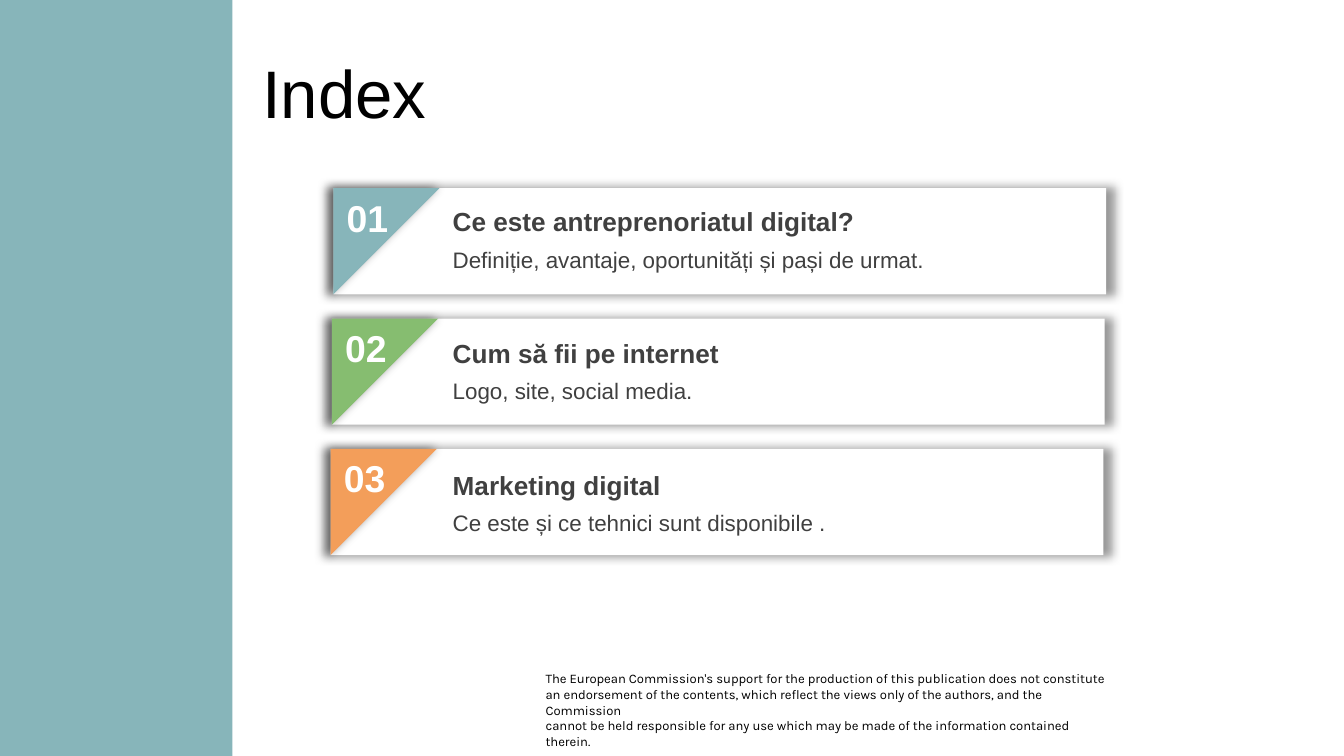
from lxml import etree
from pptx import Presentation
from pptx.dml.color import RGBColor
from pptx.enum import shapes, text
from pptx.oxml import ns
from pptx.util import Inches, Pt

COLORS = {
    "teal": "87B5BA",
    "green": "86BD70",
    "orange": "F39E5A",
    "white": "FFFFFF",
    "black": "000000",
    "gray": "404040",
}
TITLE = "Index"
TOPICS = [
    ("01", "Ce este antreprenoriatul digital?",
     "Definiție, avantaje, oportunități și pași de urmat.", "teal"),
    ("02", "Cum să fii pe internet", "Logo, site, social media.", "green"),
    ("03", "Marketing digital", "Ce este și ce tehnici sunt disponibile .", "orange"),
]
DISCLAIMER = [
    "The European Commission's support for the production of this publication does not "
    "constitute an endorsement of the contents, which reflect the views only of the "
    "authors, and the Commission",
    "cannot be held responsible for any use which may be made of the information "
    "contained therein.",
]
SLIDE_WIDTH = 10
SLIDE_HEIGHT = SLIDE_WIDTH * 9 / 16
CARD_LEFT, CARD_TOP = 2.48, 1.4
CARD_WIDTH, CARD_HEIGHT = 5.75, 0.79
CARD_STEP, CARD_SHIFT = 0.97, -0.01
TEXT_LEFT, TEXT_TOP, TEXT_STEP = 3.27, 1.48, 0.98


def color(name):
    return RGBColor.from_string(COLORS[name])


def add_glow_shadow(shape):
    effects = shape.fill._xPr.find(ns.qn("a:effectLst"))
    shadow = etree.SubElement(
        effects, ns.qn("a:outerShdw"), blurRad=str(Pt(5)), dist="0", dir="0",
        sx="102000", sy="102000", algn="ctr", rotWithShape="0")
    tint = etree.SubElement(shadow, ns.qn("a:srgbClr"), val=COLORS["black"])
    etree.SubElement(tint, ns.qn("a:alpha"), val="40000")


def add_block(slide, kind, box, fill, shadow=False):
    shape = slide.shapes.add_shape(kind, *map(Inches, box))
    shape.shadow.inherit = False
    shape.fill.solid()
    shape.fill.fore_color.rgb = color(fill)
    shape.line.fill.background()
    if shadow:
        add_glow_shadow(shape)
    return shape


def format_paragraph(paragraph, size, fill, bold=False, font="Arial"):
    paragraph.font.name = font
    paragraph.font.size = Pt(size)
    paragraph.font.bold = bold
    paragraph.font.color.rgb = color(fill)


def add_text(slide, box, lines, size, fill, bold=False, font="Arial", inset=True):
    frame = slide.shapes.add_textbox(*map(Inches, box)).text_frame
    frame.word_wrap = True
    if not inset:
        frame.margin_left = frame.margin_right = 0
        frame.margin_top = frame.margin_bottom = 0
    frame.text = "\n".join(lines)
    for paragraph in frame.paragraphs:
        format_paragraph(paragraph, size, fill, bold, font)


def add_title(slide):
    title = slide.shapes.title
    title.left, title.top = Inches(1.85), Inches(0.37)
    title.width, title.height = Inches(7.2), Inches(0.63)
    frame = title.text_frame
    frame.text = TITLE
    frame.auto_size = text.MSO_AUTO_SIZE.NONE
    frame.vertical_anchor = text.MSO_ANCHOR.MIDDLE
    frame.paragraphs[0].alignment = text.PP_ALIGN.LEFT
    format_paragraph(frame.paragraphs[0], 36, "black")


def add_topic(slide, row, topic):
    number, heading, summary, accent = topic
    left = CARD_LEFT + row * CARD_SHIFT
    top = CARD_TOP + row * CARD_STEP
    text_top = TEXT_TOP + row * TEXT_STEP
    add_block(slide, shapes.MSO_SHAPE.RECTANGLE,
              (left, top, CARD_WIDTH, CARD_HEIGHT), "white", shadow=True)
    corner = add_block(slide, shapes.MSO_SHAPE.RIGHT_TRIANGLE,
                       (left, top, CARD_HEIGHT, CARD_HEIGHT), accent, shadow=True)
    corner.rotation = 90
    add_text(slide, (left, top, 0.58, 0.44), [number], 20, "white", bold=True)
    add_text(slide, (TEXT_LEFT, text_top, 4.8, 0.34), [heading], 14, "gray", bold=True)
    add_text(slide, (TEXT_LEFT, text_top + 0.3, 4.8, 0.3), [summary], 12, "gray")


def main():
    presentation = Presentation()
    presentation.slide_width = Inches(SLIDE_WIDTH)
    presentation.slide_height = Inches(SLIDE_HEIGHT)
    slide = presentation.slides.add_slide(presentation.slide_layouts[5])
    add_text(slide, (4.06, 4.99, 4.17, 0.35), DISCLAIMER, 7, "black",
             font="Karla", inset=False)
    add_block(slide, shapes.MSO_SHAPE.RECTANGLE, (0, 0, 1.73, SLIDE_HEIGHT), "teal")
    add_title(slide)
    for row, topic in enumerate(TOPICS):
        add_topic(slide, row, topic)
    presentation.save("out.pptx")


if __name__ == "__main__":
    main()
